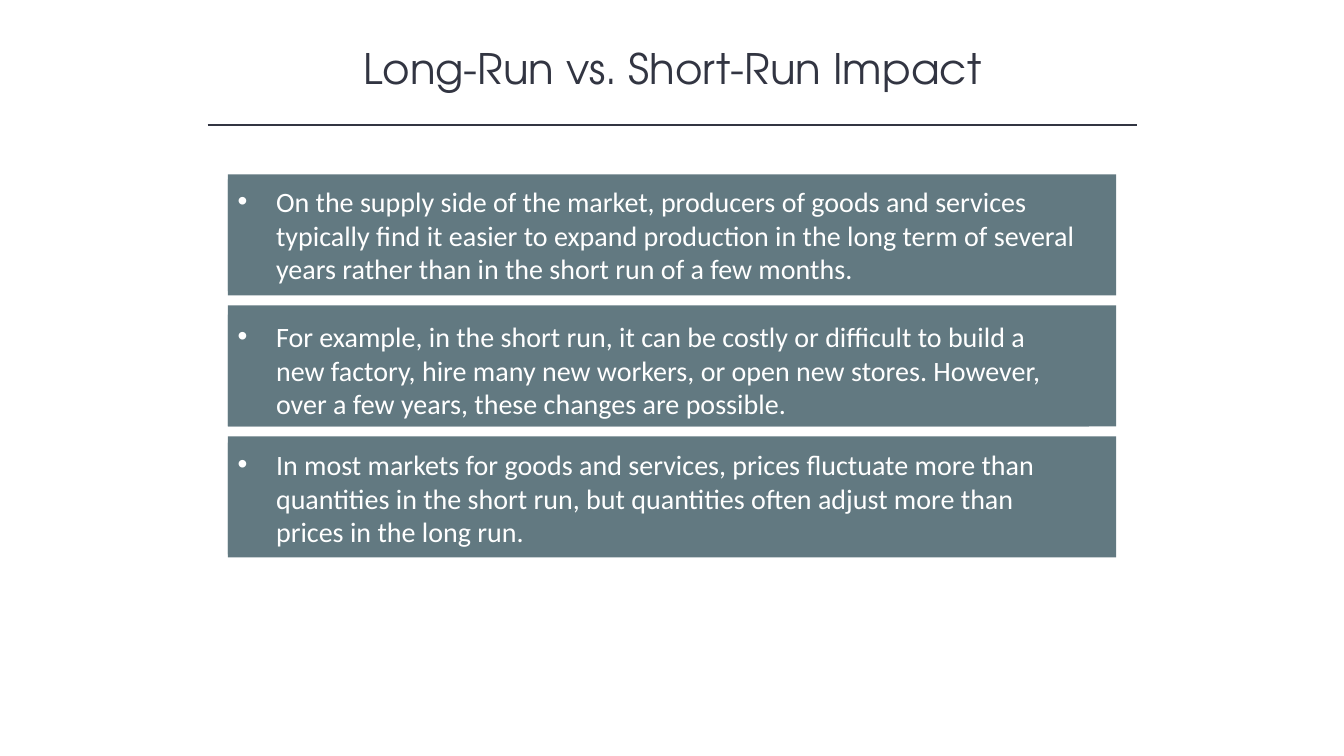
from lxml.etree import SubElement
from pptx import Presentation
from pptx.dml.color import RGBColor
from pptx.enum.shapes import MSO_CONNECTOR as Connector, MSO_SHAPE as Shape
from pptx.enum.text import MSO_ANCHOR as Anchor, PP_ALIGN as Align
from pptx.oxml.ns import qn
from pptx.util import Inches, Pt

DARK = "323542"
TEAL = "627981"
WHITE = "FFFFFF"
PANEL_STEP = 1.3
PANEL_HEIGHT = 1.2
PANELS = [
    (0.05, "On the supply side of the market, producers of goods and services typically find it easier "
           "to expand production in the long term of several years rather than in the short run of a few months."),
    (0.09, "For example, in the short run, it can be costly or difficult to build a new factory, hire many "
           "new workers, or open new stores. However, over a few years, these changes are possible."),
    (0.06, "In most markets for goods and services, prices fluctuate more than quantities in the short run, "
           "but quantities often adjust more than prices in the long run."),
]


def color(hex_string):
    return RGBColor.from_string(hex_string)


def add_bullet(paragraph, indent):
    properties = paragraph._p.get_or_add_pPr()
    properties.set("marL", str(Inches(indent)))
    properties.set("indent", str(-Inches(indent)))
    SubElement(properties, qn("a:buFont")).set("typeface", "Arial")
    SubElement(properties, qn("a:buChar")).set("char", "•")


def write_text(shape, text, *, font, size, hex_color, align=Align.LEFT, bullet_indent=None):
    frame = shape.text_frame
    frame.word_wrap = True
    frame.vertical_anchor = Anchor.TOP
    paragraph = frame.paragraphs[0]
    paragraph.text = text
    paragraph.alignment = align
    if bullet_indent:
        add_bullet(paragraph, bullet_indent)
    run_font = paragraph.runs[0].font
    run_font.name = font
    run_font.size = Pt(size)
    run_font.color.rgb = color(hex_color)


def add_rectangle(shapes, left, top, width, height):
    shape = shapes.add_shape(Shape.RECTANGLE, Inches(left), Inches(top), Inches(width), Inches(height))
    shape.shadow.inherit = False
    shape.fill.solid()
    shape.fill.fore_color.rgb = color(TEAL)
    shape.line.fill.background()
    return shape


def add_header(slide, left, top, width, height):
    title = slide.shapes.add_textbox(Inches(left), Inches(top), Inches(width), Inches(height))
    write_text(title, "Long-Run vs. Short-Run Impact", font="TeX Gyre Adventor", size=30,
               hex_color=DARK, align=Align.CENTER)
    rule_top = Inches(top + 0.87)
    rule = slide.shapes.add_connector(Connector.STRAIGHT, Inches(left + 0.39), rule_top,
                                      Inches(left + width - 0.39), rule_top)
    rule.line.color.rgb = color(DARK)
    rule.line.width = Pt(1)
    SubElement(rule._element.spPr, qn("a:effectLst"))


def add_panel(slide, left, top, width, height, text, text_offset):
    group = slide.shapes.add_group_shape()
    add_rectangle(group.shapes, left, top, width, height)
    body = add_rectangle(group.shapes, left, top + text_offset, width - 0.27, 1.11)
    write_text(body, text, font="Calibri", size=20, hex_color=WHITE, bullet_indent=0.38)


def main():
    presentation = Presentation()
    presentation.slide_width = Inches(13.33)
    presentation.slide_height = Inches(7.5)
    slide = presentation.slides.add_slide(presentation.slide_layouts[6])
    add_header(slide, 1.67, 0.37, 10, 0.61)
    for index, (text_offset, text) in enumerate(PANELS):
        add_panel(slide, 2.26, 1.73 + index * PANEL_STEP, 8.81, PANEL_HEIGHT, text, text_offset)
    presentation.save("out.pptx")


if __name__ == "__main__":
    main()
